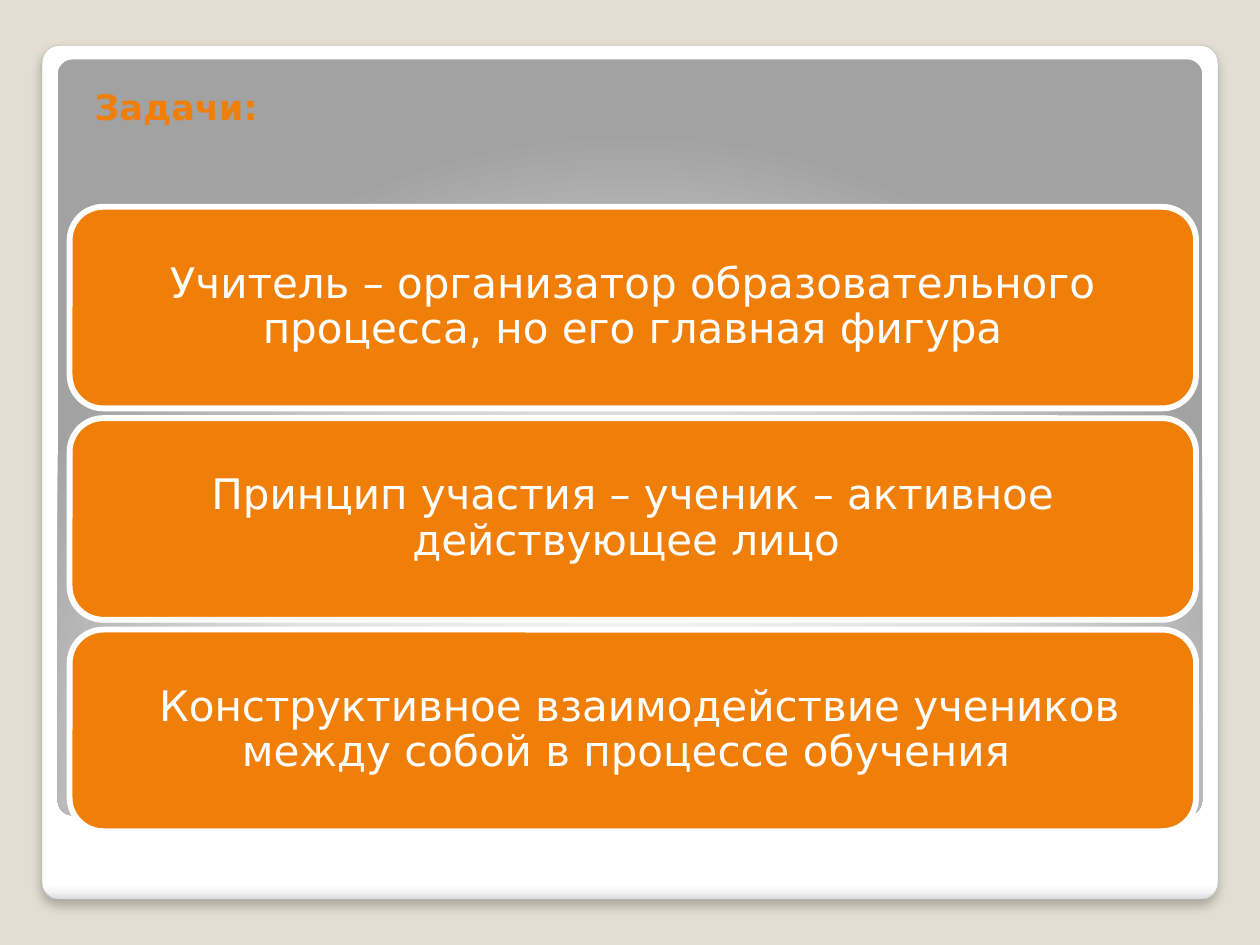
from pptx import Presentation
from pptx.dml.color import RGBColor as RGB
from pptx.enum.shapes import MSO_SHAPE as Kind
from pptx.enum.text import MSO_ANCHOR as Anchor, MSO_AUTO_SIZE as Auto, PP_ALIGN as Align
from pptx.oxml import parse_xml
from pptx.oxml.ns import nsdecls
from pptx.util import Pt

HUES = {"back": "E3DED1", "white": "FFFFFF", "accent": "F07F09", "edge": "A4A4A4",
        "pale": "F7F7F7", "rim": "DADADA", "mid": "E1E1E1", "grey": "A2A2A2", "black": "000000"}
FONT = "DejaVu Sans"


def add_box(left, top, width, height, curve):
    box = slide.shapes.add_shape(Kind.ROUNDED_RECTANGLE, Pt(left), Pt(top), Pt(width), Pt(height))
    box.adjustments[0] = curve
    box.shadow.inherit = False
    return box


def set_fade(box, stops, shade):
    marks = "".join(f'<a:gs pos="{pos * 1000}"><a:srgbClr val="{HUES[hue]}"/></a:gs>'
                    for pos, hue in stops)
    fade = parse_xml(f'<a:gradFill {nsdecls("a")} rotWithShape="1">'
                     f'<a:gsLst>{marks}</a:gsLst>{shade}</a:gradFill>')
    box._element.spPr.insert(2, fade)


deck = Presentation()
deck.slide_width, deck.slide_height = Pt(720), Pt(540)
slide = deck.slides.add_slide(deck.slide_layouts[5])
back = slide.background.fill
back.solid()
back.fore_color.rgb = RGB.from_string(HUES["back"])

frame = add_box(24, 26, 672, 488, 0.02)
set_fade(frame, [(0, "white"), (98, "white"), (99, "pale"), (100, "rim")],
         '<a:lin ang="5400000" scaled="0"/>')
frame.line.color.rgb = RGB.from_string(HUES["edge"])
frame.line.width = Pt(0.16)
frame._element.spPr[-1].append(parse_xml(
    f'<a:outerShdw {nsdecls("a")} blurRad="{Pt(6)}" dist="{Pt(4)}" dir="5400000" rotWithShape="0">'
    f'<a:srgbClr val="{HUES["black"]}"><a:alpha val="25000"/></a:srgbClr></a:outerShdw>'))

panel = add_box(33, 34, 654, 432, 0.02)
set_fade(panel, [(0, "white"), (55, "mid"), (100, "grey")],
         '<a:path path="circle"><a:fillToRect l="50000" t="175000" r="50000" b="-75000"/></a:path>')
panel.line.fill.background()

tasks = ["Учитель – организатор образовательного процесса, но его главная фигура",
         "Принцип участия – ученик – активное действующее лицо ",
         " Конструктивное взаимодействие учеников между собой в процессе обучения "]
for row, task in enumerate(tasks):
    card = add_box(39.8, 118.2 + row * 120.8, 643.7, 115.2, 0.167)
    card.fill.solid()
    card.fill.fore_color.rgb = RGB.from_string(HUES["accent"])
    card.line.color.rgb = RGB.from_string(HUES["white"])
    card.line.width = Pt(3.35)
    body = card.text_frame
    body.text = task
    body.word_wrap = True
    body.vertical_anchor = Anchor.MIDDLE
    body.margin_left = body.margin_right = Pt(14)
    para = body.paragraphs[0]
    para.alignment = Align.CENTER
    para.line_spacing = 0.9
    font = para.runs[0].font
    font.name, font.size = FONT, Pt(24)
    font.color.rgb = RGB.from_string(HUES["white"])

title = slide.shapes.title
slide.shapes._spTree.append(title._element)
title.left, title.top, title.width, title.height = Pt(39.6), Pt(41.8), Pt(644.4), Pt(59.8)
head = title.text_frame
head.text = "Задачи:"
head.word_wrap = True
head.auto_size = Auto.NONE
head.vertical_anchor = Anchor.TOP
head.margin_left, head.margin_top = Pt(14.4), Pt(7.2)
head.margin_right, head.margin_bottom = Pt(7.2), Pt(3.6)
para = head.paragraphs[0]
para.alignment = Align.LEFT
para.space_before = Pt(2.5)
font = para.runs[0].font
font.name, font.size, font.bold = FONT, Pt(20), True
font.color.rgb = RGB.from_string(HUES["accent"])

deck.save("out.pptx")
